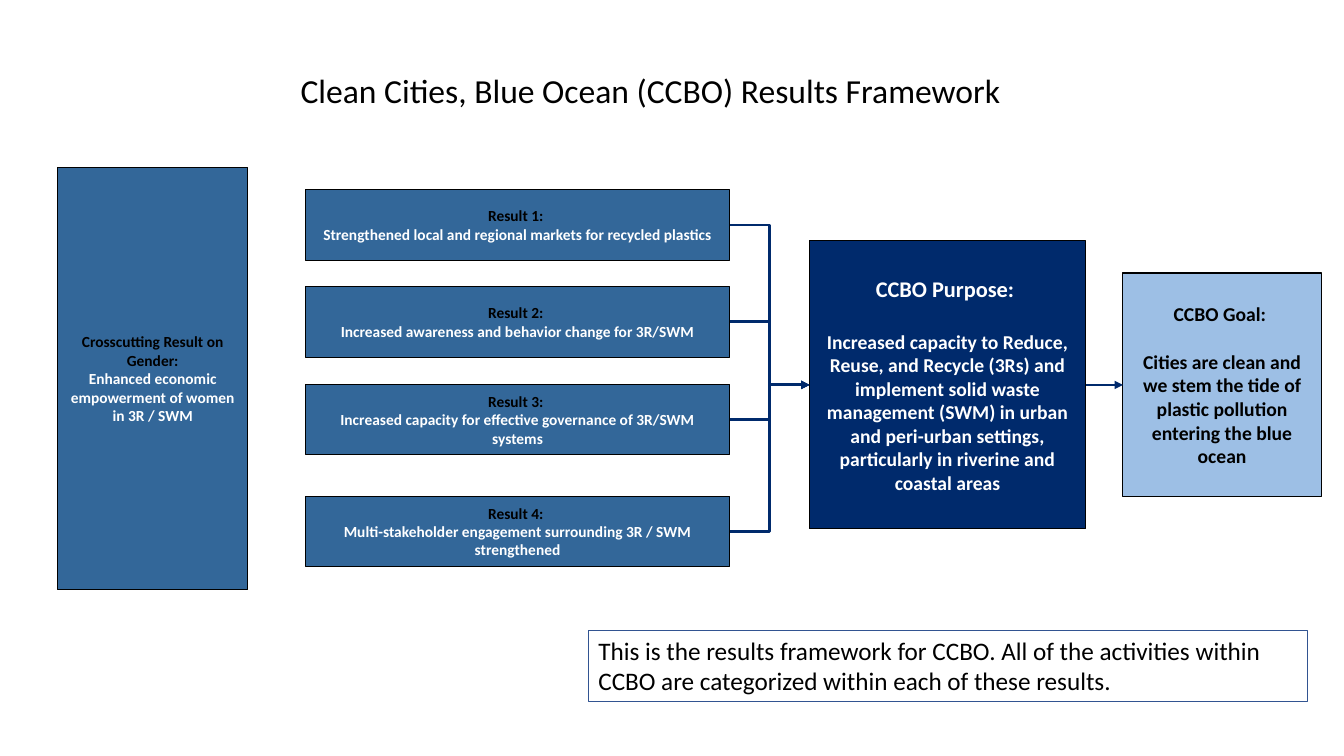
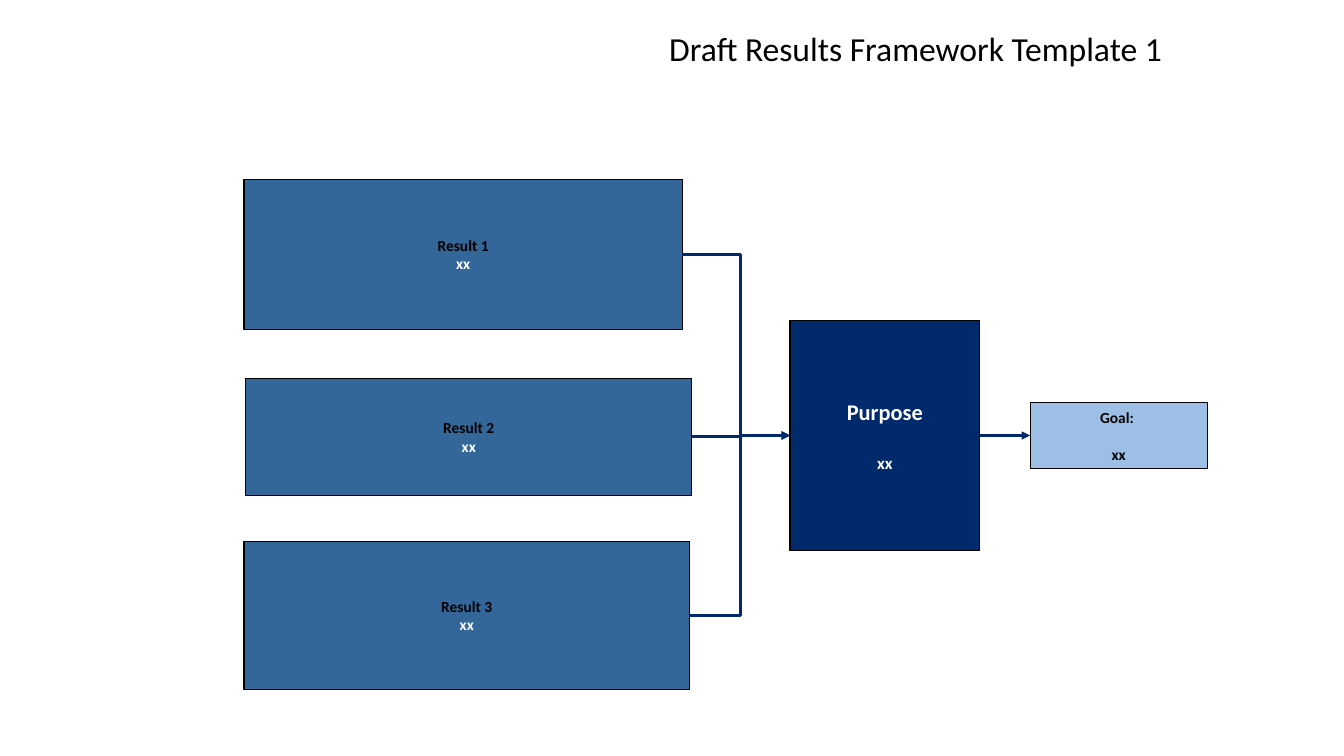
"""Build two results framework slides."""
from dataclasses import dataclass

import pptx
import pptx.dml.color
import pptx.enum.shapes
import pptx.enum.text
import pptx.oxml
import pptx.oxml.ns
import pptx.util

Cm = pptx.util.Cm
Pt = pptx.util.Pt
RGBColor = pptx.dml.color.RGBColor
MSO_CONNECTOR = pptx.enum.shapes.MSO_CONNECTOR
MSO_SHAPE = pptx.enum.shapes.MSO_SHAPE
MSO_ANCHOR = pptx.enum.text.MSO_ANCHOR
MSO_AUTO_SIZE = pptx.enum.text.MSO_AUTO_SIZE
PP_ALIGN = pptx.enum.text.PP_ALIGN

FONT = "Calibri"
BLACK = RGBColor(0x00, 0x00, 0x00)
WHITE = RGBColor(0xFF, 0xFF, 0xFF)
NAVY = RGBColor(0x00, 0x2A, 0x6C)
STEEL = RGBColor(0x33, 0x67, 0x99)
SKY = RGBColor(0x9D, 0xBF, 0xE5)
NOTE_LINE = RGBColor(0x32, 0x54, 0x91)
LINE_HEIGHT = 1.22
TOP, LEFT, BOTTOM, RIGHT = range(4)


@dataclass(frozen=True)
class Box:
    """Position and size in centimetres."""
    x: float
    y: float
    w: float
    h: float

    def emu(self) -> tuple:
        """Return the four lengths."""
        return Cm(self.x), Cm(self.y), Cm(self.w), Cm(self.h)


@dataclass(frozen=True)
class Style:
    """Colours of a block."""
    fill: RGBColor
    head: RGBColor
    body: RGBColor
    spaced: bool


RESULT = Style(STEEL, BLACK, WHITE, False)
PURPOSE = Style(NAVY, WHITE, WHITE, True)
GOAL = Style(SKY, BLACK, BLACK, True)


@dataclass(frozen=True)
class Block:
    """A filled rectangle with a heading and a body."""
    box: Box
    style: Style
    head: str
    body: str
    head_size: int = 11
    body_size: int = 11


@dataclass(frozen=True)
class Framework:
    """Content of one slide."""
    title: str
    title_box: Box
    results: list[Block]
    purpose: Block
    goal: Block
    bend_x: float


def add_run(p, text: str, size: int, color: RGBColor, bold: bool = False) -> None:
    """Add a formatted run to a paragraph."""
    r = p.add_run()
    r.text = text
    r.font.name = FONT
    r.font.size = Pt(size)
    r.font.bold = bold
    r.font.color.rgb = color


def add_title(s, text: str, box: Box) -> None:
    """Place and fill the title placeholder."""
    sp = s.shapes.title
    sp.left, sp.top, sp.width, sp.height = box.emu()
    tf = sp.text_frame
    tf.word_wrap = False
    tf.auto_size = MSO_AUTO_SIZE.SHAPE_TO_FIT_TEXT
    tf.vertical_anchor = MSO_ANCHOR.TOP
    p = tf.paragraphs[0]
    p.alignment = PP_ALIGN.LEFT
    add_run(p, text, 24, BLACK)


def add_block(s, block: Block):
    """Draw a block and return its shape."""
    style = block.style
    sp = s.shapes.add_shape(MSO_SHAPE.RECTANGLE, *block.box.emu())
    sp.shadow.inherit = False
    sp.fill.solid()
    sp.fill.fore_color.rgb = style.fill
    sp.line.color.rgb = BLACK
    sp.line.width = Pt(0.75)
    tf = sp.text_frame
    tf.word_wrap = True
    tf.vertical_anchor = MSO_ANCHOR.MIDDLE
    p = tf.paragraphs[0]
    p.alignment = PP_ALIGN.CENTER
    add_run(p, block.head, block.head_size, style.head, True)
    p = tf.add_paragraph()
    p.alignment = PP_ALIGN.CENTER
    if style.spaced:
        p.space_before = Pt(round(block.head_size * LINE_HEIGHT, 1))
    add_run(p, block.body, block.body_size, style.body, True)
    return sp


def add_arrow(s, kind, start, end):
    """Join the right side of one shape to the left side of another."""
    cx = s.shapes.add_connector(kind, 0, 0, 0, 0)
    cx.begin_connect(start, RIGHT)
    cx.end_connect(end, LEFT)
    cx.line.color.rgb = NAVY
    cx.line.width = Pt(2)
    ln = cx.line._get_or_add_ln()
    ln.append(pptx.oxml.parse_xml(
        f'<a:tailEnd {pptx.oxml.ns.nsdecls("a")} type="triangle"/>'))
    cx._element.spPr.append(pptx.oxml.parse_xml(
        f'<a:effectLst {pptx.oxml.ns.nsdecls("a")}/>'))
    return cx


def set_bend(cx, bend_x: float) -> None:
    """Put the vertical leg of an elbow connector at a given x."""
    share = (Cm(bend_x) - cx.begin_x) / (cx.end_x - cx.begin_x)
    geom = cx._element.spPr.find(pptx.oxml.ns.qn("a:prstGeom"))
    guides = geom.find(pptx.oxml.ns.qn("a:avLst"))
    guides.append(pptx.oxml.parse_xml(
        f'<a:gd {pptx.oxml.ns.nsdecls("a")} name="adj1" '
        f'fmla="val {round(share * 100000)}"/>'))


def add_note(s, text: str, box: Box) -> None:
    """Draw an outlined note."""
    sp = s.shapes.add_textbox(*box.emu())
    sp.line.color.rgb = NOTE_LINE
    sp.line.width = Pt(0.75)
    tf = sp.text_frame
    tf.word_wrap = True
    add_run(tf.paragraphs[0], text, 18, BLACK)


def add_framework(prs, framework: Framework):
    """Add a slide that leads from results to purpose to goal."""
    s = prs.slides.add_slide(prs.slide_layouts[5])
    add_title(s, framework.title, framework.title_box)
    purpose = add_block(s, framework.purpose)
    goal = add_block(s, framework.goal)
    for result in framework.results:
        sp = add_block(s, result)
        cx = add_arrow(s, MSO_CONNECTOR.ELBOW, sp, purpose)
        set_bend(cx, framework.bend_x)
    add_arrow(s, MSO_CONNECTOR.STRAIGHT, purpose, goal)
    return s


CCBO_RESULTS = [
    (4.78, "Strengthened local and regional markets for recycled plastics"),
    (7.22, "Increased awareness and behavior change for 3R/SWM"),
    (9.68, "Increased capacity for effective governance of 3R/SWM systems"),
    (12.5, "Multi-stakeholder engagement surrounding 3R / SWM strengthened"),
]
DRAFT_RESULTS = [
    Box(6.15, 4.52, 11.05, 3.78),
    Box(6.2, 9.53, 11.23, 2.95),
    Box(6.15, 13.64, 11.23, 3.73),
]

CCBO = Framework(
    title="Clean Cities, Blue Ocean (CCBO) Results Framework",
    title_box=Box(7.32, 1.63, 19.23, 1.27),
    results=[Block(Box(7.7, y, 10.69, 1.78), RESULT, f"Result {i}: ", body)
             for i, (y, body) in enumerate(CCBO_RESULTS, 1)],
    purpose=Block(
        Box(20.4, 6.07, 6.96, 7.26), PURPOSE, "CCBO Purpose: ",
        "Increased capacity to Reduce, Reuse, and Recycle (3Rs) and implement "
        "solid waste management (SWM) in urban and peri-urban settings, "
        "particularly in riverine and coastal areas", 16, 14),
    goal=Block(
        Box(28.3, 6.88, 5, 5.64), GOAL, "CCBO Goal: ",
        "Cities are clean and we stem the tide of plastic pollution entering "
        "the blue ocean", 14, 14),
    bend_x=19.39,
)
DRAFT = Framework(
    title="Draft Results Framework Template 1",
    title_box=Box(16.61, 0.58, 13.08, 1.27),
    results=[Block(box, RESULT, f"Result {i}", "xx")
             for i, box in enumerate(DRAFT_RESULTS, 1)],
    purpose=Block(Box(19.91, 8.08, 4.78, 5.79), PURPOSE, "Purpose", "xx", 16, 12),
    goal=Block(Box(25.96, 10.14, 4.47, 1.67), GOAL, "Goal: ", "xx"),
    bend_x=18.66,
)


def main() -> None:
    """Build and save the presentation."""
    prs = pptx.Presentation()
    prs.slide_width, prs.slide_height = Cm(33.87), Cm(19.05)
    s = add_framework(prs, CCBO)
    add_block(s, Block(
        Box(1.45, 4.22, 4.8, 10.64), RESULT, "Crosscutting Result on Gender:",
        "Enhanced economic empowerment of women in 3R / SWM"))
    add_note(
        s, "This is the results framework for CCBO. All of the activities "
        "within CCBO are categorized within each of these results.",
        Box(14.83, 15.88, 18.11, 1.8))
    add_framework(prs, DRAFT)
    prs.save("out.pptx")


if __name__ == "__main__":
    main()
